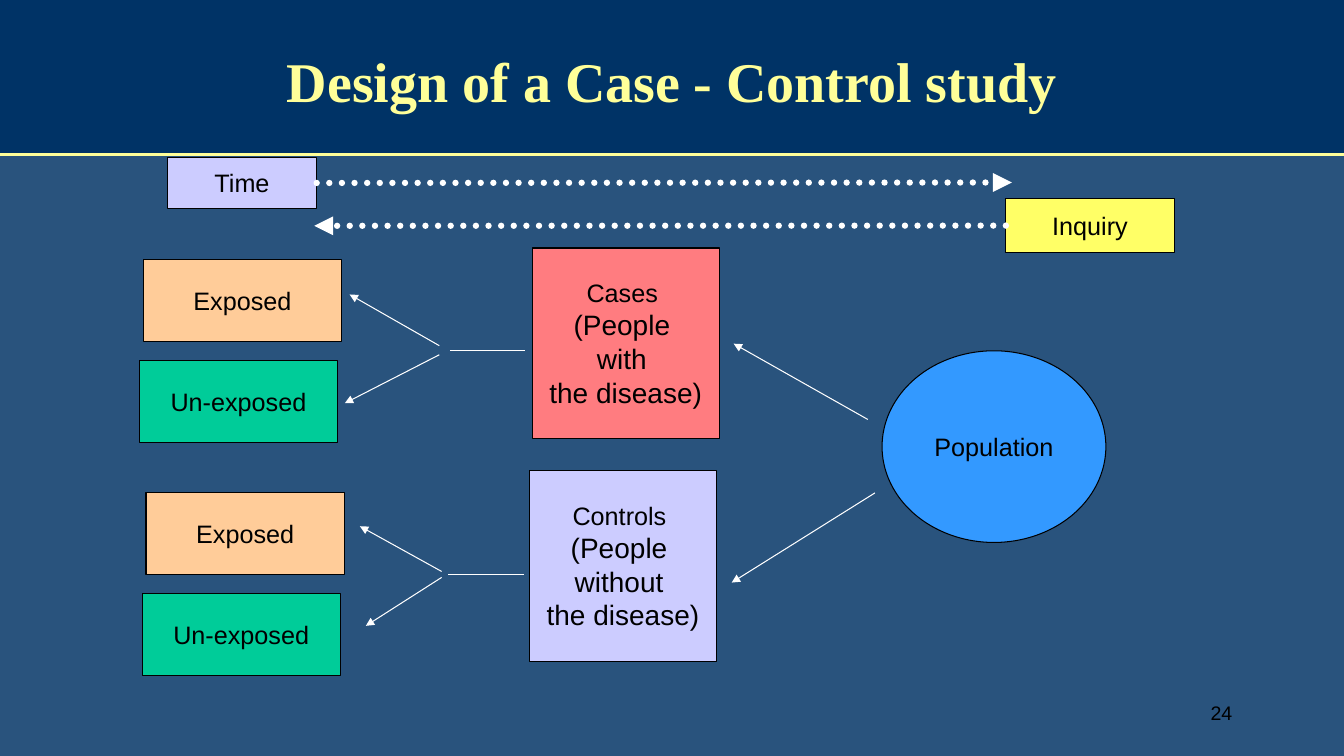
from lxml import etree
from pptx import Presentation
from pptx.dml.color import RGBColor
from pptx.enum.dml import MSO_LINE
from pptx.enum.shapes import MSO_CONNECTOR, MSO_SHAPE
from pptx.enum.text import MSO_ANCHOR, MSO_AUTO_SIZE, PP_ALIGN
from pptx.oxml.ns import qn
from pptx.util import Cm, Pt

RECT, OVAL = MSO_SHAPE.RECTANGLE, MSO_SHAPE.OVAL
STRAIGHT = MSO_CONNECTOR.STRAIGHT
DOTS = MSO_LINE.ROUND_DOT
MIDDLE = MSO_ANCHOR.MIDDLE
CENTER, RIGHT = PP_ALIGN.CENTER, PP_ALIGN.RIGHT
NO_FIT = MSO_AUTO_SIZE.NONE
LEFT_SIDE, RIGHT_SIDE = 1, 3
WIDE, HIGH, BAND = 33.87, 19.05, 3.89

COLORS = {
    "back": "29537D", "band": "003366", "cream": "FFFF99",
    "white": "FFFFFF", "black": "000000", "blue": "3399FF",
    "red": "FF7C80", "peach": "FFCC99", "green": "00CC99",
    "lilac": "CCCCFF", "yellow": "FFFF66",
}


def color(name):
    return RGBColor.from_string(COLORS[name])


def write(frame, text, sizes=(18,), font="Arial", ink="black", bold=False,
          align=CENTER, wrap=False, spacing=None):
    """Fill a frame, one paragraph a line; the last size covers the rest."""
    frame.auto_size = NO_FIT
    frame.word_wrap = wrap
    frame.vertical_anchor = MIDDLE
    for i, line in enumerate(text.split("\n")):
        para = frame.paragraphs[0] if i == 0 else frame.add_paragraph()
        para.alignment = align
        if spacing:
            para.line_spacing = spacing
        run = para.add_run()
        run.text = line
        run.font.name = font
        run.font.size = Pt(sizes[min(i, len(sizes) - 1)])
        run.font.bold = bold
        run.font.color.rgb = color(ink)


class Board:
    """The slide being built and the style of its parts."""

    def __init__(self, deck):
        self.slide = deck.slides.add_slide(deck.slide_layouts[5])
        self.shapes = self.slide.shapes
        fill = self.slide.background.fill
        fill.solid()
        fill.fore_color.rgb = color("back")

    def title(self, text, *place):
        title = self.shapes.title
        title.left, title.top, title.width, title.height = map(Cm, place)
        write(title.text_frame, text, sizes=(40,), font="Times New Roman",
              ink="cream", bold=True, wrap=True, spacing=0.85)
        # Bring the title in front of the band
        title.element.getparent().append(title.element)

    def box(self, text, fill, *place, kind=RECT, edge="black", **style):
        shape = self.shapes.add_shape(kind, *map(Cm, place))
        shape.shadow.inherit = False
        shape.fill.solid()
        shape.fill.fore_color.rgb = color(fill)
        if edge:
            shape.line.color.rgb = color(edge)
            shape.line.width = Pt(0.75)
        else:
            shape.line.fill.background()
        if text:
            write(shape.text_frame, text, **style)
        return shape

    def label(self, text, *place, **style):
        write(self.shapes.add_textbox(*map(Cm, place)).text_frame,
              text, **style)

    def line(self, start, end, ink="white", width=0.75, arrow=True,
             dots=False):
        link = self.shapes.add_connector(STRAIGHT, *map(Cm, start + end))
        link.line.color.rgb = color(ink)
        link.line.width = Pt(width)
        edge = link.get_or_add_ln()
        if dots:
            link.line.dash_style = DOTS
            edge.set("cap", "rnd")
        if arrow:
            etree.SubElement(edge, qn("a:tailEnd"), type="triangle")
        etree.SubElement(link.element.spPr, qn("a:effectLst"))
        return link


def main():
    deck = Presentation()
    deck.slide_width, deck.slide_height = Cm(WIDE), Cm(HIGH)
    board = Board(deck)

    board.box("", "band", 0, 0, WIDE, BAND, edge=None)
    board.line((0, BAND), (WIDE, BAND), ink="cream", width=2, arrow=False)
    board.title("Design of a Case - Control study", 2.54, 0.43, 28.78, 3.46)
    board.label("24", 24.38, 17.32, 6.93, 1.3, sizes=(14,), align=RIGHT,
                wrap=True)

    time = board.box("Time", "lilac", 4.22, 3.96, 3.76, 1.3)
    ahead = board.line((8, 4.6), (25.5, 4.6), width=4.5, dots=True)
    ahead.begin_connect(time, RIGHT_SIDE)
    inquiry = board.box("Inquiry", "yellow", 25.35, 5, 4.24, 1.37)
    back = board.line((25.35, 5.69), (7.92, 5.69), width=4.5, dots=True)
    back.begin_connect(inquiry, LEFT_SIDE)

    board.box("Population", "blue", 22.23, 8.84, 5.64, 4.83, kind=OVAL)

    # Group text, fill and corner; corner of its upper exposure box
    groups = (
        ("Cases \n(People \nwith \nthe disease)", "red",
         (13.41, 6.25), (3.61, 6.55)),
        ("Controls \n(People \nwithout \nthe disease)", "lilac",
         (13.34, 11.86), (3.68, 12.42)),
    )
    for text, fill, corner, (left, top) in groups:
        board.box(text, fill, *corner, 4.72, 4.8, sizes=(18, 20))
        board.box("Exposed", "peach", left, top, 5, 2.06)
        board.box("Un-exposed", "green", left - 0.1, top + 2.54, 5, 2.06)

    stems = (
        ((13.23, 8.84), (11.33, 8.84)),
        ((13.21, 14.48), (11.3, 14.48)),
    )
    for start, end in stems:
        board.line(start, end, arrow=False)

    arrows = (
        ((21.87, 10.57), (18.49, 8.66)),
        ((22.05, 12.42), (18.44, 14.68)),
        ((11.07, 8.71), (8.81, 7.42)),
        ((11.07, 8.94), (8.69, 10.16)),
        ((11.13, 14.4), (9.07, 13.26)),
        ((11.13, 14.55), (9.22, 15.77)),
    )
    for start, end in arrows:
        board.line(start, end)

    deck.save("out.pptx")


if __name__ == "__main__":
    main()
